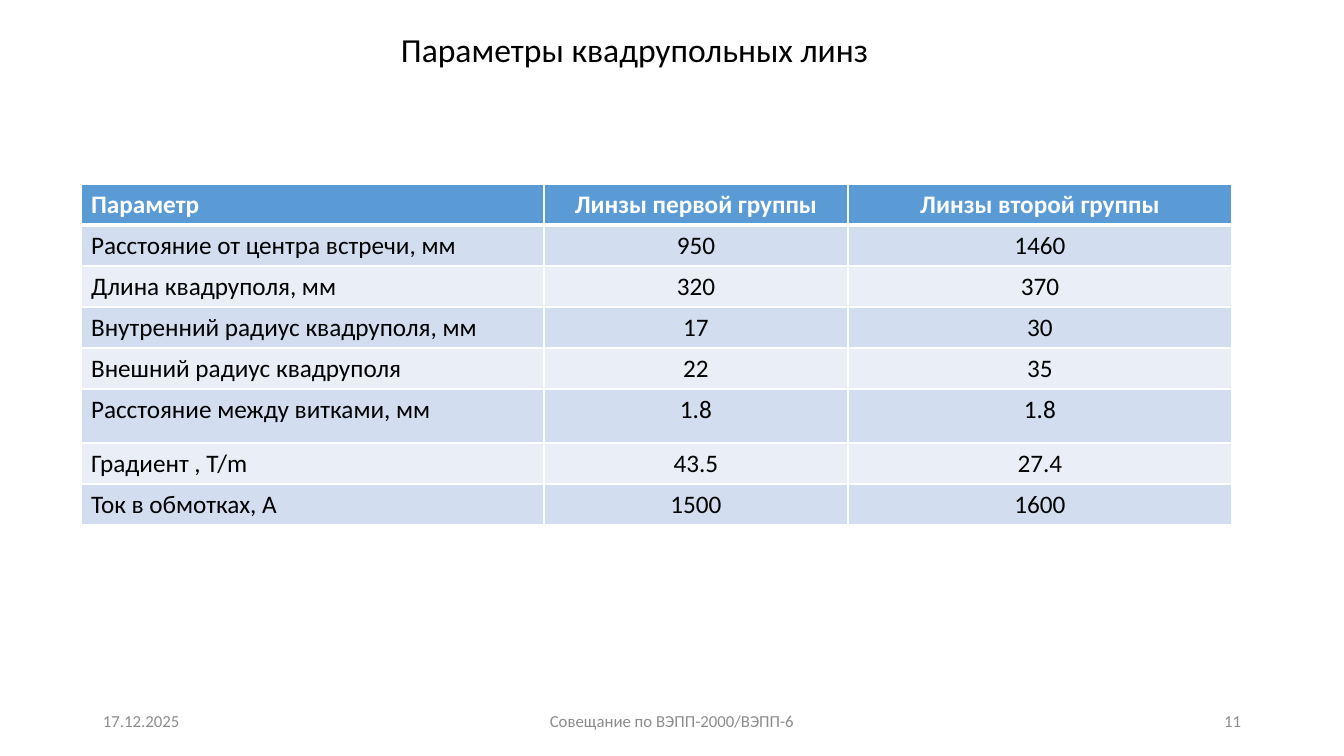
from lxml import etree
from pptx import Presentation
from pptx import util as u
from pptx.dml.color import RGBColor
from pptx.enum import text
from pptx.oxml.ns import qn

LEFT, CENTER, RIGHT = text.PP_ALIGN.LEFT, text.PP_ALIGN.CENTER, text.PP_ALIGN.RIGHT
TOP, MIDDLE = text.MSO_ANCHOR.TOP, text.MSO_ANCHOR.MIDDLE
BLACK = RGBColor(0x00, 0x00, 0x00)
WHITE = RGBColor(0xFF, 0xFF, 0xFF)
GREY = RGBColor(0x8C, 0x8C, 0x8C)
BLUE = RGBColor(0x5B, 0x9B, 0xD5)
BANDS = (RGBColor(0xEA, 0xEF, 0xF7), RGBColor(0xD2, 0xDE, 0xEF))

TITLE_FONT = {"name": "Calibri", "size": u.Pt(24)}
FOOTER_FONT = {"name": "Calibri", "size": u.Pt(12)}
HEAD_FONT = {"name": "Calibri", "size": u.Pt(18), "bold": True}
BODY_FONT = {"name": "Calibri", "size": u.Pt(18), "bold": False}

LABELS = [
    ("17.12.2025", (93, 701, 302, 40), LEFT, MIDDLE, True, FOOTER_FONT, GREY),
    ("Совещание по ВЭПП-2000/ВЭПП-6", (445, 701, 454, 40), CENTER, MIDDLE, True, FOOTER_FONT, GREY),
    ("11", (949, 701, 302, 40), RIGHT, MIDDLE, True, FOOTER_FONT, GREY),
    ("Параметры квадрупольных линз", (391, 24, 492, 50), LEFT, TOP, False, TITLE_FONT, BLACK),
]
ROWS = [
    ("Параметр", "Линзы первой группы", "Линзы второй группы"),
    ("Расстояние от центра встречи, мм", "950", "1460"),
    ("Длина квадруполя, мм", "320", "370"),
    ("Внутренний радиус квадруполя, мм", "17", "30"),
    ("Внешний радиус квадруполя", "22", "35"),
    ("Расстояние между витками, мм", "1.8", "1.8"),
    ("Градиент , T/m", "43.5", "27.4"),
    ("Ток в обмотках, A", "1500", "1600"),
]
TABLE_LEFT, TABLE_TOP = 81, 184
COL_WIDTHS = (463, 304, 384)
ROW_HEIGHT, TALL_ROW, TALL_HEIGHT = 41, 5, 54


def px(n):
    return round(n * 914400 / 100.8)


def write(tf, words, align, font, color):
    p = tf.paragraphs[0]
    p.alignment = align
    r = p.add_run()
    r.text = words
    for key, value in font.items():
        setattr(r.font, key, value)
    r.font.color.rgb = color


def add_borders(cell, row):
    widths = {"L": 1, "R": 1, "T": 3 if row == 1 else 1, "B": 3 if row == 0 else 1}
    tc_pr = cell._tc.get_or_add_tcPr()
    for side, width in widths.items():
        ln = etree.SubElement(tc_pr, qn("a:ln" + side), w=str(u.Pt(width)))
        fill = etree.SubElement(ln, qn("a:solidFill"))
        etree.SubElement(fill, qn("a:srgbClr"), val=str(WHITE))


def add_label(s, words, box, align, anchor, wrap, font, color):
    tf = s.shapes.add_textbox(*map(px, box)).text_frame
    tf.word_wrap = wrap
    tf.vertical_anchor = anchor
    if not wrap:
        tf.auto_size = text.MSO_AUTO_SIZE.SHAPE_TO_FIT_TEXT
    write(tf, words, align, font, color)


def add_parameters(s):
    heights = [TALL_HEIGHT if i == TALL_ROW else ROW_HEIGHT for i in range(len(ROWS))]
    box = (TABLE_LEFT, TABLE_TOP, sum(COL_WIDTHS), sum(heights))
    table = s.shapes.add_table(len(ROWS), len(COL_WIDTHS), *map(px, box)).table
    for col, width in zip(table.columns, COL_WIDTHS):
        col.width = px(width)
    for i, values in enumerate(ROWS):
        table.rows[i].height = px(heights[i])
        for j, value in enumerate(values):
            cell = table.cell(i, j)
            add_borders(cell, i)
            cell.fill.solid()
            cell.fill.fore_color.rgb = BANDS[i % 2] if i else BLUE
            write(cell.text_frame, value, CENTER if j else LEFT,
                  BODY_FONT if i else HEAD_FONT, BLACK if i else WHITE)


def main():
    prs = Presentation()
    prs.slide_width, prs.slide_height = px(1344), px(756)
    s = prs.slides.add_slide(prs.slide_layouts[6])
    for label in LABELS:
        add_label(s, *label)
    add_parameters(s)
    prs.save("out.pptx")


if __name__ == "__main__":
    main()
